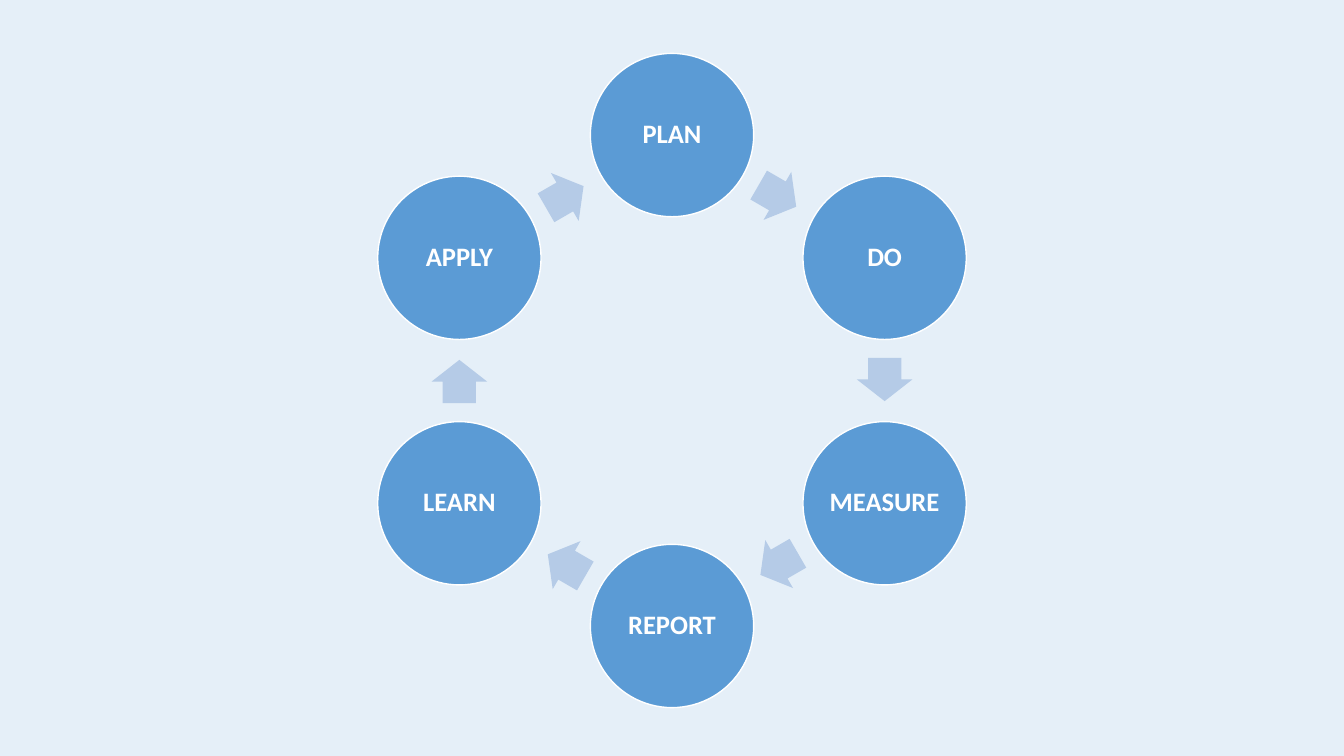
from math import cos, radians, sin

from pptx import Presentation
from pptx.dml.color import RGBColor
from pptx.enum.shapes import MSO_SHAPE
from pptx.enum.text import MSO_ANCHOR, PP_ALIGN
from pptx.util import Inches, Pt

OVAL = MSO_SHAPE.OVAL
RIGHT_ARROW = MSO_SHAPE.RIGHT_ARROW
MIDDLE = MSO_ANCHOR.MIDDLE
CENTER = PP_ALIGN.CENTER

PALE_BLUE = RGBColor(0xE5, 0xEF, 0xF8)
STEP_BLUE = RGBColor(0x5B, 0x9B, 0xD5)
ARROW_BLUE = RGBColor(0xB5, 0xCB, 0xE7)
WHITE = RGBColor(0xFF, 0xFF, 0xFF)

FONT = "Calibri"
STEPS = ["PLAN", "DO", "MEASURE", "REPORT", "LEARN", "APPLY"]
STEP_SIZE = 1.62
ARROW_LENGTH, ARROW_WIDTH = 0.43, 0.55
ARROW_SETBACK = 0.01


def add_centred(shapes, kind, x, y, width, height, fill):
    shape = shapes.add_shape(kind, Inches(x - width / 2), Inches(y - height / 2),
                             Inches(width), Inches(height))
    shape.shadow.inherit = False
    shape.fill.solid()
    shape.fill.fore_color.rgb = fill
    return shape


def add_step(shapes, x, y, label):
    step = add_centred(shapes, OVAL, x, y, STEP_SIZE, STEP_SIZE, STEP_BLUE)
    step.line.color.rgb = WHITE
    step.line.width = Pt(1)
    frame = step.text_frame
    frame.word_wrap = False
    frame.vertical_anchor = MIDDLE
    frame.margin_left = frame.margin_right = Inches(0.03)
    frame.margin_top = frame.margin_bottom = Inches(0.03)
    paragraph = frame.paragraphs[0]
    paragraph.alignment = CENTER
    paragraph.line_spacing = 0.9
    run = paragraph.add_run()
    run.text = label
    run.font.name = FONT
    run.font.size = Pt(19)
    run.font.bold = True
    run.font.color.rgb = WHITE


def add_arrow(shapes, x, y, heading):
    arrow = add_centred(shapes, RIGHT_ARROW, x, y, ARROW_LENGTH, ARROW_WIDTH, ARROW_BLUE)
    arrow.line.fill.background()
    arrow.adjustments[0] = 0.6
    arrow.adjustments[1] = 0.5
    arrow.rotation = heading


def add_cycle(slide, left, top, width, height, labels):
    shapes = slide.shapes.add_group_shape().shapes
    centre_x, centre_y = left + width / 2, top + height / 2
    radius = (height - STEP_SIZE) / 2
    turn = 360 / len(labels)
    arrow_radius = radius * cos(radians(turn / 2))
    for index, label in enumerate(labels):
        angle = radians(index * turn - 90)
        add_step(shapes, centre_x + radius * cos(angle),
                 centre_y + radius * sin(angle), label)
        heading = (index + 0.5) * turn
        outward, forward = radians(heading - 90), radians(heading)
        add_arrow(shapes,
                  centre_x + arrow_radius * cos(outward) - ARROW_SETBACK * cos(forward),
                  centre_y + arrow_radius * sin(outward) - ARROW_SETBACK * sin(forward),
                  heading)


def main():
    deck = Presentation()
    deck.slide_width = Inches(13.33)
    deck.slide_height = Inches(7.5)
    slide = deck.slides.add_slide(deck.slide_layouts[6])
    slide.background.fill.solid()
    slide.background.fill.fore_color.rgb = PALE_BLUE
    add_cycle(slide, 3.75, 0.53, 5.83, 6.49, STEPS)
    deck.save("out.pptx")


if __name__ == "__main__":
    main()
